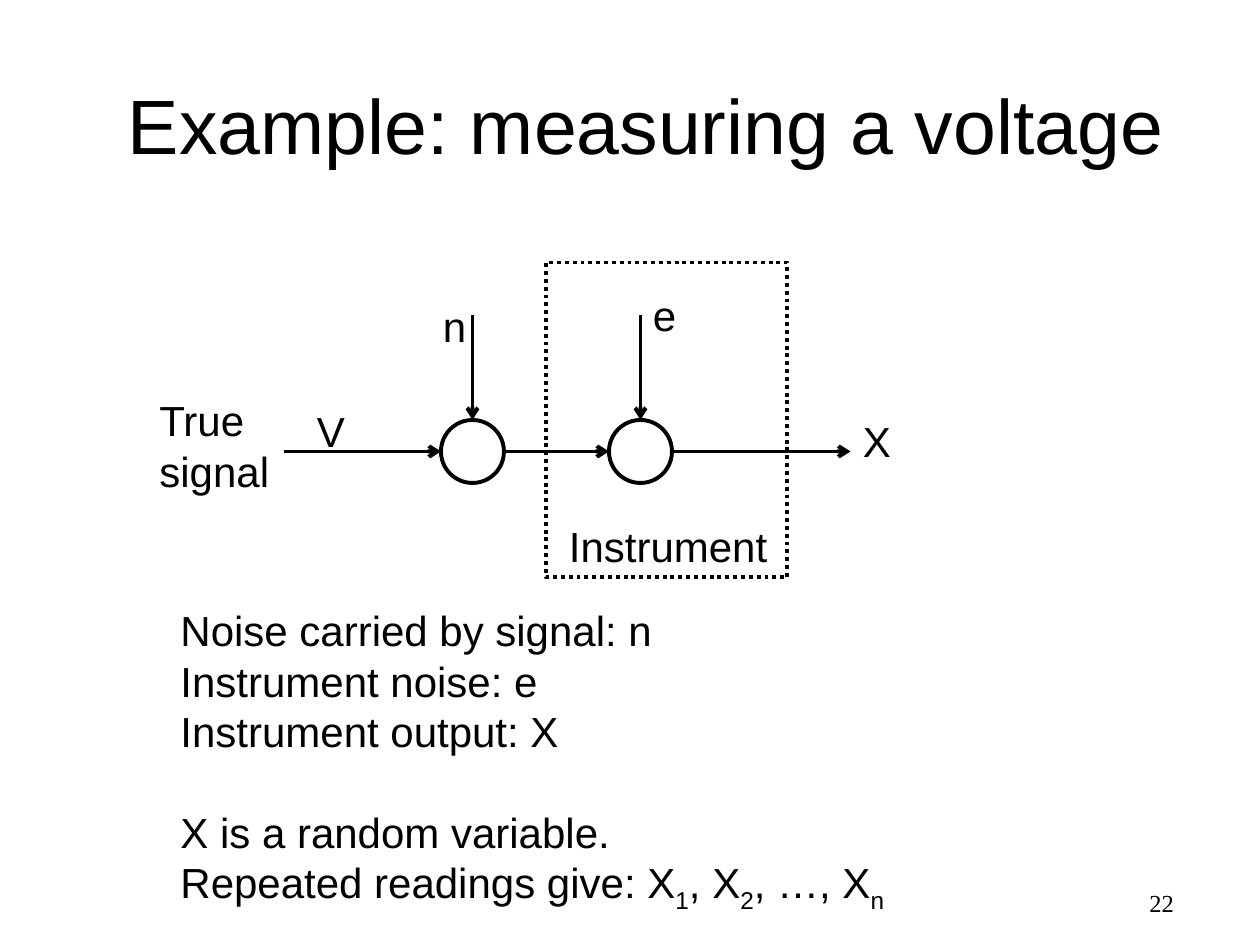
from dataclasses import dataclass
from typing import Any

from lxml import etree
from pptx import Presentation
from pptx.dml.color import RGBColor
from pptx.enum.dml import MSO_LINE
from pptx.enum.shapes import MSO_CONNECTOR, MSO_SHAPE
from pptx.enum.text import MSO_ANCHOR, PP_ALIGN
from pptx.oxml.ns import qn
from pptx.util import Inches, Pt

BLACK = RGBColor(0, 0, 0)
DOTTED = MSO_LINE.ROUND_DOT
STRAIGHT = MSO_CONNECTOR.STRAIGHT
CIRCLE, RECTANGLE = MSO_SHAPE.OVAL, MSO_SHAPE.RECTANGLE
MIDDLE, TOP = MSO_ANCHOR.MIDDLE, MSO_ANCHOR.TOP
LEFT, RIGHT = PP_ALIGN.LEFT, PP_ALIGN.RIGHT

COLUMNS, ROWS = 120, 90
SIGNAL_ROW, RADIUS = 43, 3
NOISE_JUNCTION, ERROR_JUNCTION = 45, 61
SIGNAL_START, OUTPUT_END, NOISE_TOP = 27, 81, 30


@dataclass
class Diagram:
    """Draws styled elements on one slide, placed by grid columns and rows."""

    slide: Any
    width: int
    height: int
    font: str = "Arial"
    size: int = 24
    stroke: float = 2.25

    def place(self, column, row):
        return round(self.width * column / COLUMNS), round(self.height * row / ROWS)

    def apply(self, target, formats):
        for name, value in formats.items():
            setattr(target, name, value)

    def outline(self, line, **extra):
        line.color.rgb = BLACK
        self.apply(line, {"width": Pt(self.stroke), **extra})

    def text(self, column, row, columns, rows, lines, wrap=True, size=None,
             font=None, anchor=TOP, align=LEFT, gap_before=None):
        box = self.slide.shapes.add_textbox(
            *self.place(column, row), *self.place(columns, rows))
        frame = box.text_frame
        self.apply(frame, {"word_wrap": wrap, "vertical_anchor": anchor})
        for index, line in enumerate(lines):
            paragraph = frame.add_paragraph() if index else frame.paragraphs[0]
            paragraph.alignment = align
            if index == gap_before:
                paragraph.space_before = Pt(1.2 * self.size)
            for part, wording in enumerate(line.split("_")):
                run = paragraph.add_run()
                run.text = wording
                run.font.color.rgb = BLACK
                self.apply(run.font, {"name": font or self.font,
                                      "size": Pt(size or self.size)})
                if part % 2:
                    run._r.get_or_add_rPr().set("baseline", "-25000")

    def shape(self, kind, column, row, columns, rows, **line_format):
        shape = self.slide.shapes.add_shape(
            kind, *self.place(column, row), *self.place(columns, rows))
        shape.shadow.inherit = False
        shape.fill.background()
        self.outline(shape.line, **line_format)

    def junction(self, column):
        self.shape(CIRCLE, column - RADIUS, SIGNAL_ROW - RADIUS,
                   2 * RADIUS, 2 * RADIUS)

    def arrow(self, start, end):
        arrow = self.slide.shapes.add_connector(
            STRAIGHT, *self.place(*start), *self.place(*end))
        self.outline(arrow.line)
        etree.SubElement(arrow.line._get_or_add_ln(), qn("a:tailEnd"), type="arrow")
        etree.SubElement(arrow._element.spPr, qn("a:effectLst"))


def main():
    deck = Presentation()
    deck.slide_width, deck.slide_height = Inches(10), Inches(7.5)
    slide = deck.slides.add_slide(deck.slide_layouts[6])
    diagram = Diagram(slide, deck.slide_width, deck.slide_height)

    diagram.text(11, 4.5, 102, 14.5, ["Example: measuring a voltage"],
                 size=44, anchor=MIDDLE)
    diagram.text(90, 83, 23, 6, ["22"], wrap=False, size=14,
                 font="Times New Roman", anchor=MIDDLE, align=RIGHT)

    junctions = (NOISE_JUNCTION, ERROR_JUNCTION)
    for junction in junctions:
        diagram.junction(junction)
        diagram.arrow((junction, NOISE_TOP), (junction, SIGNAL_ROW - RADIUS))
    starts = (SIGNAL_START, *(junction + RADIUS for junction in junctions))
    ends = (*(junction - RADIUS for junction in junctions), OUTPUT_END)
    for start, end in zip(starts, ends):
        diagram.arrow((start, SIGNAL_ROW), (end, SIGNAL_ROW))

    diagram.shape(RECTANGLE, 52, 25, 23, 30, dash_style=DOTTED)
    diagram.text(53, 49, 21.5, 6, ["Instrument"], wrap=False)
    diagram.text(16, 57, 88, 30, [
        "Noise carried by signal: n",
        "Instrument noise: e",
        "Instrument output: X",
        "X is a random variable.",
        "Repeated readings give: X_1_, X_2_, …, X_n",
    ], gap_before=3)
    diagram.text(14, 37, 15, 11, ["True signal"])
    diagram.text(41, 28, 4, 6, ["n"])
    for symbol, column, row in (("V", 29, 38), ("X", 81, 39), ("e", 61, 27)):
        diagram.text(column, row, 5, 6, [symbol], wrap=False)

    deck.save("out.pptx")


if __name__ == "__main__":
    main()
